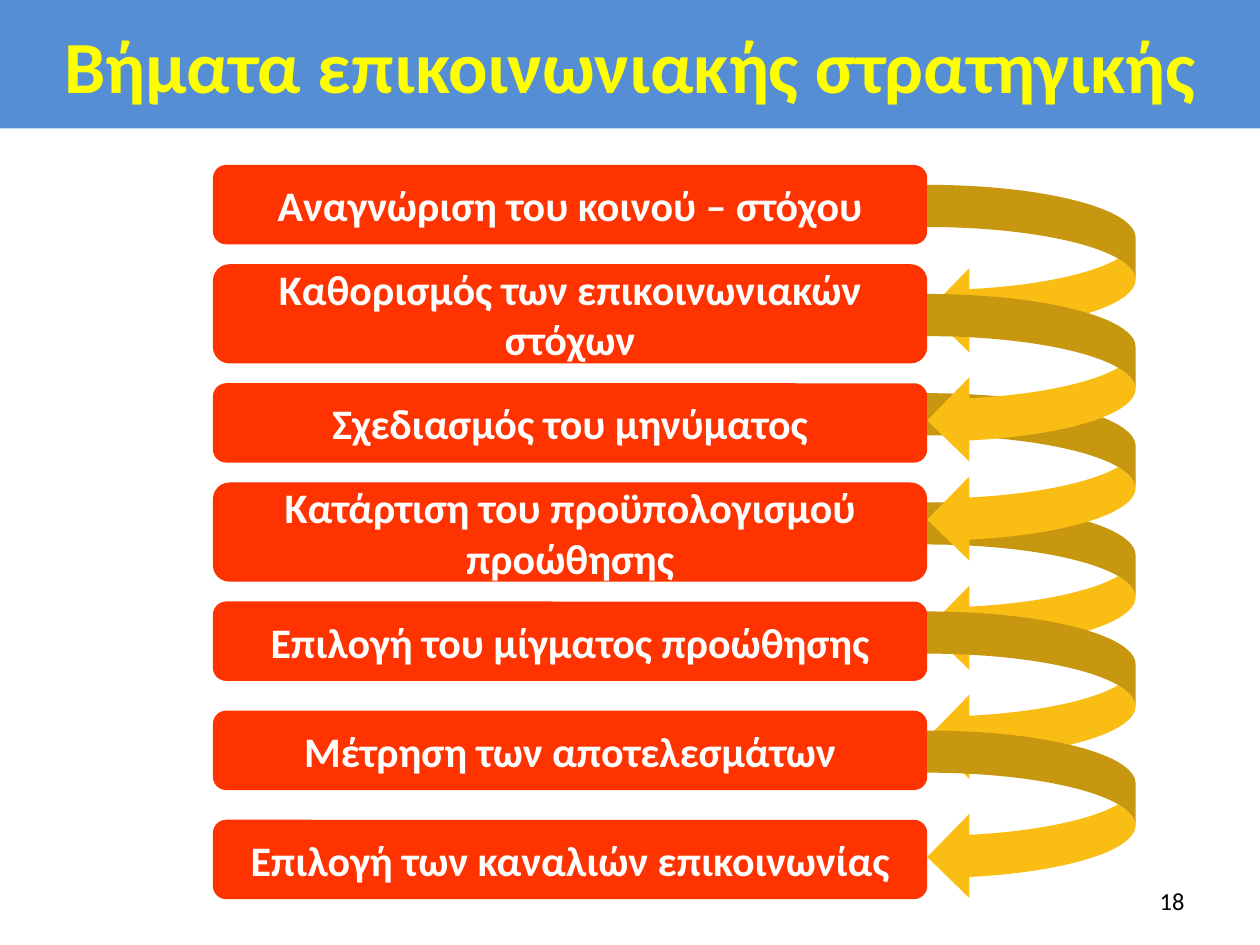
from pptx import Presentation
from pptx.dml.color import RGBColor
from pptx.enum.shapes import MSO_SHAPE
from pptx.enum.text import MSO_ANCHOR, PP_ALIGN
from pptx.util import Cm, Inches, Pt
from dataclasses import dataclass


@dataclass
class Theme:
    font: str = "Calibri"
    band: str = "558ED5"
    title: str = "FFFF00"
    step: str = "FF3300"
    step_text: str = "FFFFFF"
    arrow: str = "F9BD13"
    number: str = "000000"
    title_size: int = 42
    step_size: int = 24
    number_size: int = 14


def add_block(kind, left, top, width, height, color):
    block = page.shapes.add_shape(kind, int(left), int(top), int(width), int(height))
    block.shadow.inherit = False
    block.fill.solid()
    block.fill.fore_color.rgb = RGBColor.from_string(color)
    block.line.fill.background()
    return block


def write_text(box, text, size, color, bold=True, align=PP_ALIGN.CENTER):
    frame = box.text_frame
    frame.word_wrap = True
    frame.vertical_anchor = MSO_ANCHOR.MIDDLE
    para = frame.paragraphs[0]
    para.alignment = align
    span = para.add_run()
    span.text = text
    span.font.name = theme.font
    span.font.size = Pt(size)
    span.font.bold = bold
    span.font.color.rgb = RGBColor.from_string(color)


theme = Theme()
deck = Presentation()
deck.slide_width = Inches(10)
deck.slide_height = Inches(7.5)
page = deck.slides.add_slide(deck.slide_layouts[6])

title_band = add_block(MSO_SHAPE.RECTANGLE, 0, 0, deck.slide_width, deck.slide_height * 0.136, theme.band)
write_text(title_band, "Βήματα επικοινωνιακής στρατηγικής", theme.title_size, theme.title)

number_box = page.shapes.add_textbox(Inches(7.17), Inches(6.95), Inches(2.33), Inches(0.4))
write_text(number_box, "18", theme.number_size, theme.number, False, PP_ALIGN.RIGHT)

unit = Cm(0.2)
steps_left, steps_top = Inches(1.69), Inches(1.31)
step_width = 72 * unit
steps = [
    ("Αναγνώριση του κοινού – στόχου", 0, 8),
    ("Καθορισμός των επικοινωνιακών στόχων", 10, 10),
    ("Σχεδιασμός του μηνύματος", 22, 8),
    ("Κατάρτιση του προϋπολογισμού προώθησης", 32, 10),
    ("Επιλογή του μίγματος προώθησης", 44, 8),
    ("Μέτρηση των αποτελεσμάτων", 55, 8),
    ("Επιλογή των καναλιών επικοινωνίας", 66, 8),
]
for label, row, rows in steps:
    step = add_block(MSO_SHAPE.ROUNDED_RECTANGLE, steps_left, steps_top + row * unit,
                     step_width, rows * unit, theme.step)
    write_text(step, label, theme.step_size, theme.step_text)

for row in (2, 34, 45, 57, 23, 13):
    add_block(MSO_SHAPE.CURVED_LEFT_ARROW, steps_left + step_width, steps_top + row * unit,
              21 * unit, 17 * unit, theme.arrow)

deck.save("out.pptx")
